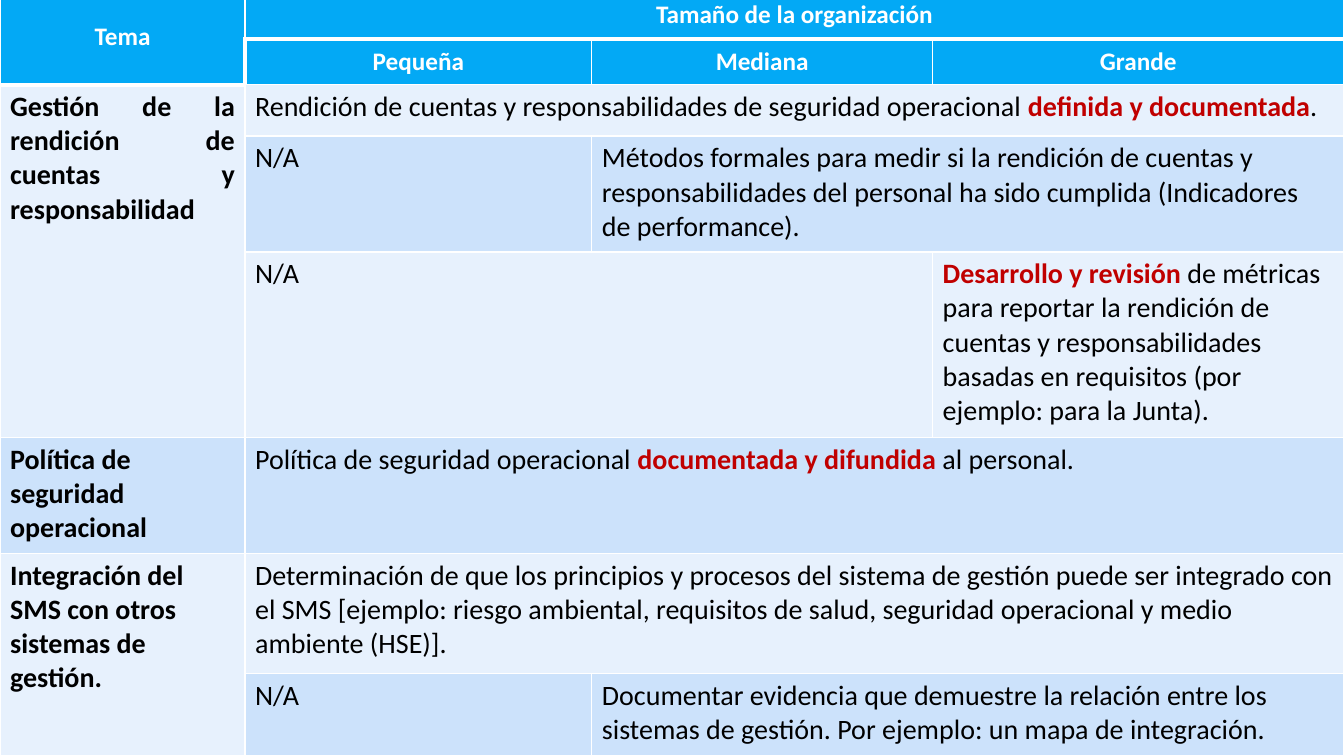
from itertools import product

from lxml import etree
from pptx import Presentation, util as u
from pptx.dml.color import RGBColor
from pptx.enum import text
from pptx.oxml.ns import qn

WIDTH, HEIGHT = 13.33, 7.5
FONT = "Calibri"
COLORS = {"header": "03A9F5", "light": "E7F1FD", "band": "CCE2FB",
          "white": "FFFFFF", "black": "000000", "accent": "C00000"}
COLUMNS = [2.43, 3.44, 3.38, 4.08]
ROWS = [0.49, 0.45, 0.51, 1.15, 1.84, 1.15, 1.19, 0.82]
ALIGN = {"left": text.PP_ALIGN.LEFT, "center": text.PP_ALIGN.CENTER,
         "justify": text.PP_ALIGN.JUSTIFY}
STYLES = {
    "heading": (18, True, "white"),
    "topic": (20, True, "black"),
    "plain": (20, False, "black"),
    "key": (20, True, "accent"),
}


def heading(label):
    return [(label, "heading")]


def topic(label):
    return [(label, "topic")]


def plain(label):
    return [(label, "plain")]


REQUIREMENTS = [
    (0, 0, 2, 1, "header", "center", heading("Tema")),
    (0, 1, 1, 3, "header", "center", heading("Tamaño de la organización")),
    (1, 1, 1, 1, "header", "center", heading("Pequeña")),
    (1, 2, 1, 1, "header", "center", heading("Mediana")),
    (1, 3, 1, 1, "header", "center", heading("Grande")),
    (2, 0, 3, 1, "light", "justify", topic("Gestión de la rendición de cuentas y responsabilidad")),
    (2, 1, 1, 3, "light", "left", [
        ("Rendición de cuentas y responsabilidades de seguridad operacional ", "plain"),
        ("definida y documentada", "key"), (".", "plain")]),
    (3, 1, 1, 1, "band", "left", plain("N/A")),
    (3, 2, 1, 2, "band", "left", plain(
        "Métodos formales para medir si la rendición de cuentas y responsabilidades "
        "del personal ha sido cumplida (Indicadores de performance).")),
    (4, 1, 1, 2, "light", "left", plain("N/A")),
    (4, 3, 1, 1, "light", "left", [
        ("Desarrollo y revisión ", "key"),
        ("de métricas para reportar la rendición de cuentas y responsabilidades "
         "basadas en requisitos (por ejemplo: para la Junta).", "plain")]),
    (5, 0, 1, 1, "band", "left", topic("Política de seguridad operacional")),
    (5, 1, 1, 3, "band", "left", [
        ("Política de seguridad operacional ", "plain"),
        ("documentada y difundida ", "key"), ("al personal.", "plain")]),
    (6, 0, 2, 1, "light", "left", topic("Integración del SMS con otros sistemas de gestión.")),
    (6, 1, 1, 3, "light", "left", plain(
        "Determinación de que los principios y procesos del sistema de gestión puede "
        "ser integrado con el SMS [ejemplo: riesgo ambiental, requisitos de salud, "
        "seguridad operacional y medio ambiente (HSE)].")),
    (7, 1, 1, 1, "band", "left", plain("N/A")),
    (7, 2, 1, 2, "band", "left", plain(
        "Documentar evidencia que demuestre la relación entre los sistemas de gestión. "
        "Por ejemplo: un mapa de integración.")),
]

THICK_EDGES = {("B", 0, column) for column in range(4)}
THICK_EDGES |= {("T", 1, column) for column in range(1, 4)}
THICK_EDGES |= {("L", 1, 1), ("B", 1, 0), ("T", 2, 0)}


def draw_borders(cell, row, column):
    properties = cell._tc.get_or_add_tcPr()
    for side in "LRTB":
        points = 3 if (side, row, column) in THICK_EDGES else 1
        line = etree.SubElement(properties, qn(f"a:ln{side}"), w=str(u.Pt(points)))
        solid = etree.SubElement(line, qn("a:solidFill"))
        etree.SubElement(solid, qn("a:srgbClr"), val=COLORS["white"])


def write_runs(cell, align, runs):
    paragraph = cell.text_frame.paragraphs[0]
    paragraph.alignment = ALIGN[align]
    for words, style in runs:
        size, bold, color = STYLES[style]
        run = paragraph.add_run()
        run.text = words
        run.font.name = FONT
        run.font.size = u.Pt(size)
        run.font.bold = bold
        run.font.color.rgb = RGBColor.from_string(COLORS[color])


def add_requirements(slide, left, top, width, height):
    table = slide.shapes.add_table(
        len(ROWS), len(COLUMNS),
        u.Inches(left), u.Inches(top), u.Inches(width), u.Inches(height)).table
    for column, share in zip(table.columns, COLUMNS):
        column.width = u.Inches(width * share / sum(COLUMNS))
    for row, share in zip(table.rows, ROWS):
        row.height = u.Inches(height * share / sum(ROWS))
    for row, column in product(range(len(ROWS)), range(len(COLUMNS))):
        draw_borders(table.cell(row, column), row, column)
    for row, column, down, across, fill, align, runs in REQUIREMENTS:
        for r, c in product(range(row, row + down), range(column, column + across)):
            part = table.cell(r, c)
            part.fill.solid()
            part.fill.fore_color.rgb = RGBColor.from_string(COLORS[fill])
        cell = table.cell(row, column)
        if down * across > 1:
            cell.merge(table.cell(row + down - 1, column + across - 1))
        cell.vertical_anchor = (text.MSO_ANCHOR.MIDDLE if fill == "header"
                                else text.MSO_ANCHOR.TOP)
        write_runs(cell, align, runs)


def main():
    deck = Presentation()
    deck.slide_width, deck.slide_height = u.Inches(WIDTH), u.Inches(HEIGHT)
    slide = deck.slides.add_slide(deck.slide_layouts[6])
    table_height = sum(ROWS)
    add_requirements(slide, 0, HEIGHT - table_height, WIDTH, table_height)
    deck.save("out.pptx")


if __name__ == "__main__":
    main()
